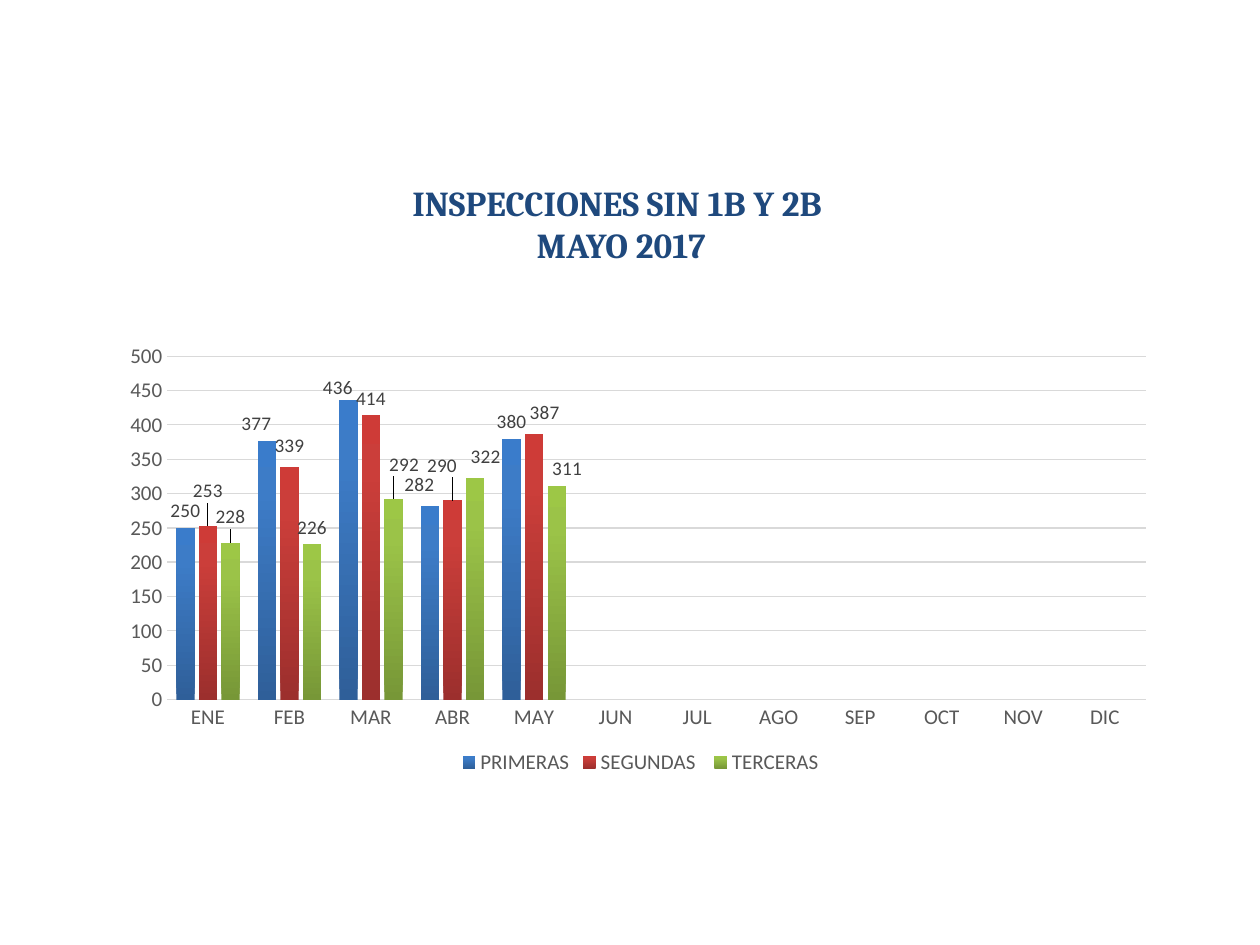
import copy

import lxml.etree
import pptx
import pptx.chart.data
import pptx.dml.color
import pptx.enum.chart
import pptx.enum.text
import pptx.oxml
import pptx.oxml.ns
import pptx.util
from pptx.dml.color import RGBColor
from pptx.util import Inches

NAVY = RGBColor(0x1F, 0x49, 0x7D)
GREY = RGBColor(0x59, 0x59, 0x59)
DARK = RGBColor(0x40, 0x40, 0x40)
GRID = RGBColor(0xD9, 0xD9, 0xD9)
BLUES = [RGBColor(0x2F, 0x5F, 0x99), RGBColor(0x3D, 0x7C, 0xC7), RGBColor(0x3A, 0x7C, 0xCB)]
REDS = [RGBColor(0x9C, 0x2F, 0x2D), RGBColor(0xCB, 0x3E, 0x3A), RGBColor(0xCE, 0x3B, 0x37)]
GREENS = [RGBColor(0x77, 0x97, 0x37), RGBColor(0x9B, 0xC3, 0x48), RGBColor(0x9D, 0xC7, 0x46)]

MONTHS = ["ENE", "FEB", "MAR", "ABR", "MAY", "JUN",
          "JUL", "AGO", "SEP", "OCT", "NOV", "DIC"]
# Name, values, gradient, label offsets as fractions of the chart size
SERIES = [
    ("PRIMERAS", [250, 377, 436, 282, 380], BLUES,
     [(0, 0), (-0.01, 0), (-0.01, 0.01), (-0.01, -0.01), (0, 0)]),
    ("SEGUNDAS ", [253, 339, 414, 290, 387], REDS,
     [(0, -0.04), (0, -0.01), (0, 0), (-0.01, -0.04), (0.01, -0.01)]),
    ("TERCERAS", [228, 226, 292, 322, 311], GREENS,
     [(0, -0.02), (0, 0), (0.01, -0.04), (0.01, -0.01), (0.01, 0)]),
]


def add_text(p, text, *, size, color, font, bold=False):
    p.alignment = pptx.enum.text.PP_ALIGN.CENTER
    r = p.add_run()
    r.text = text
    r.font.size = pptx.util.Pt(size)
    r.font.name = font
    r.font.bold = bold
    r.font.color.rgb = color


def style_font(font, size, color):
    font.size = pptx.util.Pt(size)
    font.name = "Calibri"
    font.bold = False
    font.color.rgb = color


prs = pptx.Presentation()
prs.slide_width = Inches(10)
prs.slide_height = Inches(7.5)
s = prs.slides.add_slide(prs.slide_layouts[6])

# Title
sp = s.shapes.add_textbox(Inches(1.14), Inches(1.39), Inches(7.58), Inches(1.11))
tf = sp.text_frame
tf.word_wrap = True
for i, line in enumerate(["INSPECCIONES SIN 1B Y 2B ", "MAYO 2017"]):
    p = tf.paragraphs[0] if i == 0 else tf.add_paragraph()
    add_text(p, line, size=20, color=NAVY, font="Cambria", bold=True)

# Chart
data = pptx.chart.data.CategoryChartData()
data.categories = MONTHS
for name, values, _, _ in SERIES:
    data.add_series(name, values + [None] * (len(MONTHS) - len(values)))
chart = s.shapes.add_chart(
    pptx.enum.chart.XL_CHART_TYPE.COLUMN_CLUSTERED,
    Inches(0.91), Inches(2.65), Inches(8.35), Inches(3.54), data).chart
chart.has_title = False
style_font(chart.font, 10, RGBColor(0, 0, 0))

# Legend
chart.has_legend = True
chart.legend.position = pptx.enum.chart.XL_LEGEND_POSITION.BOTTOM
chart.legend.include_in_layout = False
style_font(chart.legend.font, 12, GREY)

# Axes
for axis in (chart.category_axis, chart.value_axis):
    axis.major_tick_mark = pptx.enum.chart.XL_TICK_MARK.NONE
    axis.minor_tick_mark = pptx.enum.chart.XL_TICK_MARK.NONE
    style_font(axis.tick_labels.font, 12, GREY)
line = chart.category_axis.format.line
line.color.rgb = GRID
line.width = pptx.util.Pt(1)
axis = chart.value_axis
axis.format.line.fill.background()
axis.minimum_scale, axis.maximum_scale, axis.major_unit = 0, 500, 50
line = axis.major_gridlines.format.line
line.color.rgb = GRID
line.width = pptx.util.Pt(0.75)

# Columns with gradients and shifted labels
plot = chart.plots[0]
plot.gap_width = 100
plot.overlap = -24
plot.vary_by_categories = False
LAYOUT = "<c:layout %s><c:manualLayout>%s</c:manualLayout></c:layout>"
NS = pptx.oxml.ns.nsdecls("c")
for ser, (_, _, colors, offsets) in zip(plot.series, SERIES):
    fill = ser.format.fill
    fill.gradient()
    fill.gradient_angle = 90
    stops = ser._element.xpath(".//a:gsLst")[0]
    stops.append(copy.deepcopy(stops[-1]))
    for stop, position, color in zip(fill.gradient_stops, (0, 0.8, 1), colors):
        stop.position = position
        stop.color.rgb = color

    labels = ser.data_labels
    labels.show_value = True
    labels.position = pptx.enum.chart.XL_LABEL_POSITION.OUTSIDE_END
    style_font(labels.font, 11, DARK)
    for i, (dx, dy) in enumerate(offsets):
        if (dx, dy) == (0, 0):
            continue
        label = ser.points[i].data_label
        style_font(label.font, 11, DARK)
        label.position = pptx.enum.chart.XL_LABEL_POSITION.OUTSIDE_END
        shift = f'<c:x val="{dx}"/><c:y val="{dy}"/>'
        d_lbl = ser._element.xpath(f"c:dLbls/c:dLbl[c:idx/@val='{i}']")[0]
        d_lbl.insert(1, pptx.oxml.parse_xml(LAYOUT % (NS, shift)))

# Plot area position
area = chart._chartSpace.xpath("c:chart/c:plotArea")[0]
for old in area.xpath("c:layout"):
    area.remove(old)
frame = ('<c:layoutTarget val="inner"/><c:xMode val="edge"/><c:yMode val="edge"/>'
         '<c:x val="0.05"/><c:y val="0.05"/><c:w val="0.93"/><c:h val="0.77"/>')
area.insert(0, pptx.oxml.parse_xml(LAYOUT % (NS, frame)))

prs.save("out.pptx")
